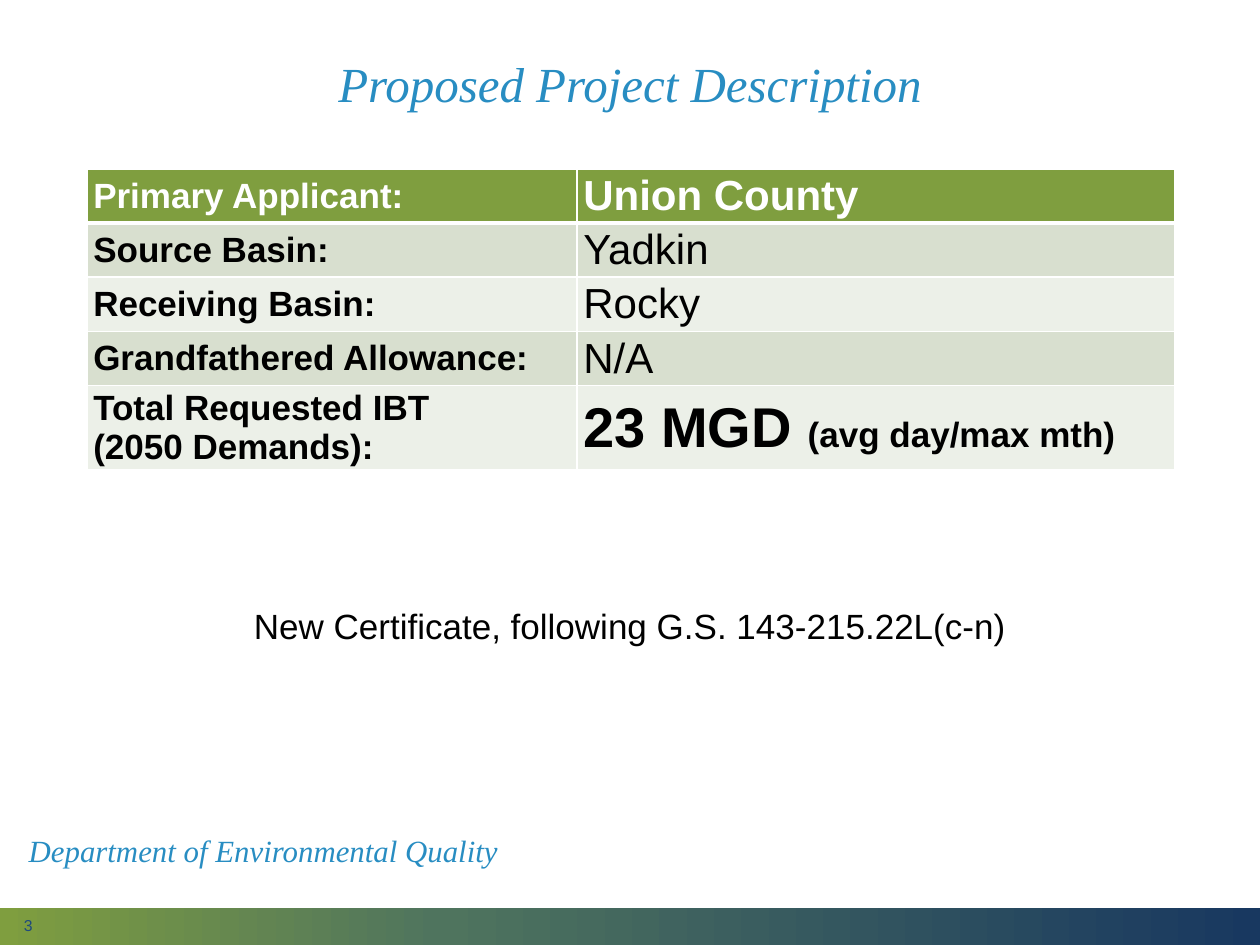
from copy import deepcopy

from lxml.etree import SubElement
from pptx import Presentation
from pptx.dml.color import RGBColor
from pptx.enum.shapes import MSO_SHAPE
from pptx.enum.text import MSO_ANCHOR, MSO_AUTO_SIZE, PP_ALIGN
from pptx.oxml.ns import qn
from pptx.util import Inches, Pt

COLORS = {
    "green": "7F9E3F", "teal": "4F745E", "navy": "183860", "blue": "288DC2",
    "number": "1F497D", "band_dark": "D8DFCF", "band_light": "ECF0E8",
    "white": "FFFFFF", "black": "000000",
}


def rgb(name):
    return RGBColor.from_string(COLORS[name])


class SlideBuilder:
    """Holds the style and the current slide."""

    body_font = "Arial"
    heading_font = "Times New Roman"

    def __init__(self, deck):
        self.page = deck.slides.add_slide(deck.slide_layouts[5])

    def add_span(self, para, text, color="black", **format_values):
        span = para.add_run()
        span.text = text
        span.font.color.rgb = rgb(color)
        for name, value in {"name": self.body_font, **format_values}.items():
            setattr(span.font, name, value)

    def fill_box(self, box, text, frame_values=None, para_values=None, **format_values):
        frame = box.text_frame
        settings = {"word_wrap": True, "auto_size": MSO_AUTO_SIZE.NONE,
                    "vertical_anchor": MSO_ANCHOR.MIDDLE, **(frame_values or {})}
        for name, value in settings.items():
            setattr(frame, name, value)
        para = frame.paragraphs[0]
        for name, value in (para_values or {}).items():
            setattr(para, name, value)
        self.add_span(para, text, **format_values)

    def title(self, text, area, **values):
        box = self.page.shapes.title
        box.left, box.top, box.width, box.height = map(Inches, area)
        self.fill_box(box, text, **values)

    def text(self, text, area, **values):
        box = self.page.shapes.add_textbox(*map(Inches, area))
        self.fill_box(box, text, **values)

    def gradient_bar(self, area, stops):
        bar = self.page.shapes.add_shape(MSO_SHAPE.RECTANGLE, *map(Inches, area))
        bar.shadow.inherit = False
        bar.line.fill.background()
        bar.fill.gradient()
        bar.fill.gradient_angle = 0
        stop_list = bar._element.spPr.find(".//" + qn("a:gsLst"))
        while len(stop_list) < len(stops):
            stop_list.append(deepcopy(stop_list[0]))
        for stop, (position, color) in zip(bar.fill.gradient_stops, stops):
            stop.position = position
            stop.color.rgb = rgb(color)

    def cell_borders(self, cell, top, bottom):
        properties = cell._tc.get_or_add_tcPr()
        for index, (side, points) in enumerate(
                [("lnL", 1), ("lnR", 1), ("lnT", top), ("lnB", bottom)]):
            line = properties.makeelement(qn("a:" + side), {"w": str(Pt(points))})
            solid = SubElement(line, qn("a:solidFill"))
            SubElement(solid, qn("a:srgbClr"), val=COLORS["white"])
            properties.insert(index, line)

    def table(self, rows, area, widths, heights):
        shape = self.page.shapes.add_table(len(rows), len(widths), *map(Inches, area))
        table = shape.table
        for column, width in zip(table.columns, widths):
            column.width = Inches(width)
        for index, (row, height) in enumerate(zip(table.rows, heights)):
            row.height = Inches(height)
            header = index == 0
            band = "green" if header else ("band_light", "band_dark")[index % 2]
            for cell, paragraphs in zip(row.cells, rows[index]):
                cell.fill.solid()
                cell.fill.fore_color.rgb = rgb(band)
                cell.vertical_anchor = MSO_ANCHOR.MIDDLE
                cell.margin_left = cell.margin_right = Inches(0.05)
                cell.margin_top = cell.margin_bottom = Pt(1.8)
                # The rule under the header is heavier, from both of its sides
                self.cell_borders(cell, 3 if index == 1 else 1, 3 if header else 1)
                frame = cell.text_frame
                for number, spans in enumerate(paragraphs):
                    para = frame.add_paragraph() if number else frame.paragraphs[0]
                    for text, size, bold in spans:
                        self.add_span(para, text, "white" if header else "black",
                                      size=Pt(size), bold=bold)


def label(*lines):
    return [[(line, 20, True)] for line in lines]


def value(text, bold=False):
    return [[(text, 24, bold)]]


def main():
    deck = Presentation()
    deck.slide_width, deck.slide_height = Inches(10), Inches(7.5)
    slide = SlideBuilder(deck)
    left, width = 0.69, 8.62
    heading = {"name": slide.heading_font, "color": "blue", "italic": True}

    # Footer bar and page number
    slide.gradient_bar((0, 7.21, 10, 0.3), [(0, "green"), (0.35, "teal"), (1, "navy")])
    slide.text("3", (0.09, 7.27, 2.25, 0.15), size=Pt(9), color="number",
               frame_values={"margin_top": 0, "margin_bottom": 0})

    # Title
    slide.title("Proposed Project Description", (left, 0.11, width, 1.16),
                para_values={"alignment": PP_ALIGN.CENTER, "line_spacing": 0.9},
                size=Pt(28), **heading)

    # Project table
    rows = [
        (label("Primary Applicant:"), value("Union County", True)),
        (label("Source Basin:"), value("Yadkin")),
        (label("Receiving Basin:"), value("Rocky")),
        (label("Grandfathered Allowance:"), value("N/A")),
        (label("Total Requested IBT", "(2050 Demands):"),
         [[("23 MGD ", 32, True), ("(avg day/max mth)", 20, True)]]),
    ]
    slide.table(rows, (left, 1.34, width, 2.4), (3.89, 4.74), [0.43] * 4 + [0.67])

    # Department name and note
    slide.text("Department of Environmental Quality", (0.13, 6.56, 4.1, 0.41),
               para_values={"line_spacing": 0.9}, size=Pt(17.6), **heading)
    slide.text("New Certificate, following G.S. 143-215.22L(c-n)",
               (left, 4.79, width, 0.6), size=Pt(20),
               frame_values={"vertical_anchor": MSO_ANCHOR.TOP},
               para_values={"alignment": PP_ALIGN.CENTER, "line_spacing": 0.9})

    deck.save("out.pptx")


if __name__ == "__main__":
    main()
